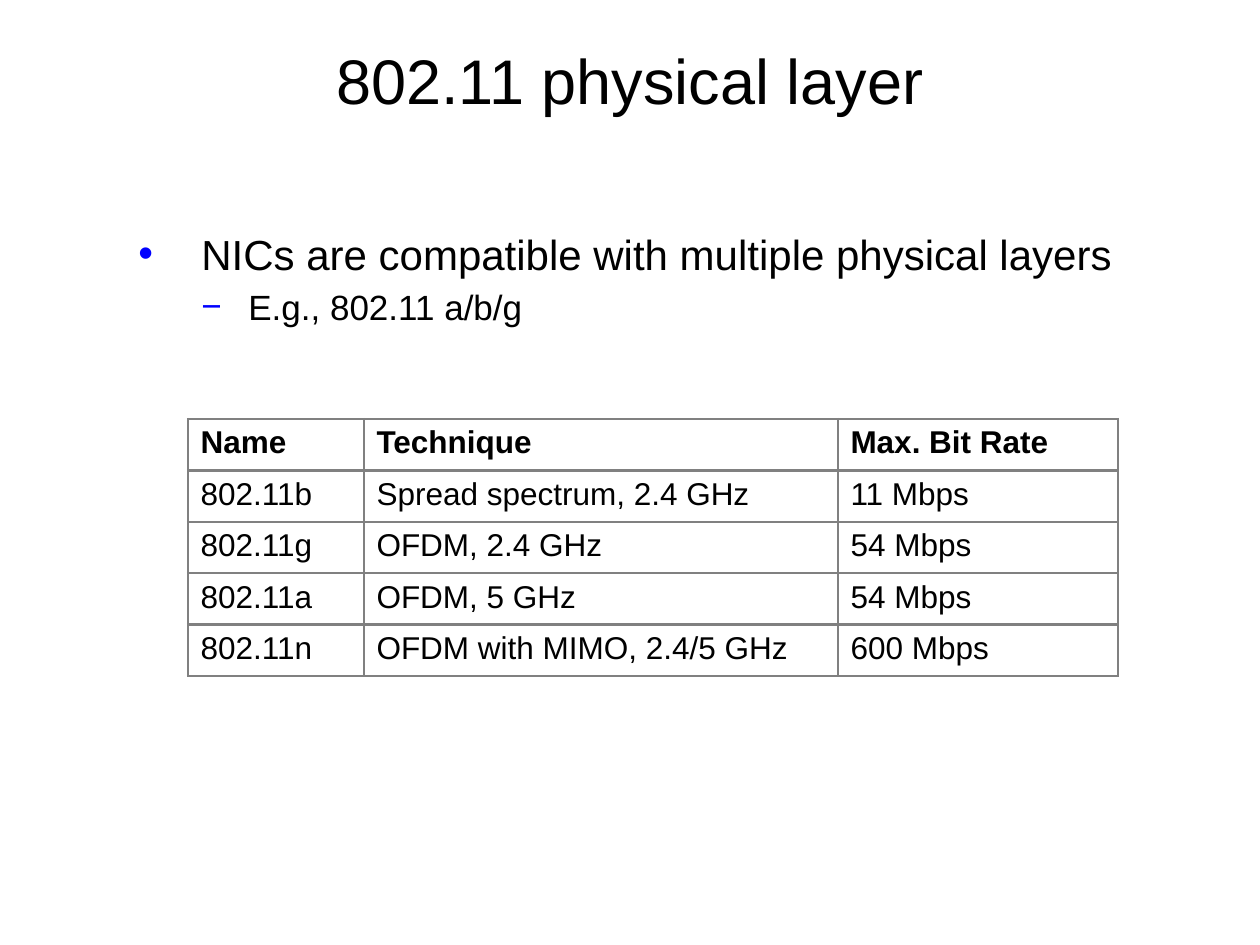
from lxml import etree
from pptx import Presentation, util as u
from pptx.dml.color import RGBColor
from pptx.enum import text
from pptx.oxml import ns

SCALE = 914400 / 126
COLORS = {"ink": "000000", "bullet": "0000FF", "grid": "808080", "paper": "FFFFFF"}
BULLETS = [
    {"words": "NICs are compatible with multiple physical layers", "size": 24,
     "char": "•", "left": 63, "hang": 63, "before": 6, "level": 0},
    {"words": "E.g., 802.11 a/b/g", "size": 20,
     "char": "−", "left": 110, "hang": 47, "before": 4, "level": 1},
]
ROWS = [
    ("Name", "Technique", "Max. Bit Rate"),
    ("802.11b", "Spread spectrum, 2.4 GHz", "11 Mbps"),
    ("802.11g", "OFDM, 2.4 GHz", "54 Mbps"),
    ("802.11a", "OFDM, 5 GHz", "54 Mbps"),
    ("802.11n", "OFDM with MIMO, 2.4/5 GHz", "600 Mbps"),
]


def px(length):
    return u.Emu(round(length * SCALE))


def add_node(parent, tag, **attributes):
    return etree.SubElement(parent, ns.qn(tag), attributes)


class SlideBuilder:
    """Holds the text style and the current slide, and adds elements to it."""

    def __init__(self, page, font="Arial"):
        self.page = page
        self.font = font

    def add_words(self, para, words, size, bold=False):
        span = para.add_run()
        span.text = words
        style = {"name": self.font, "size": u.Pt(size), "bold": bold}
        for key, value in style.items():
            setattr(span.font, key, value)
        span.font.color.rgb = RGBColor.from_string(COLORS["ink"])

    def frame(self, *place, anchor=text.MSO_ANCHOR.TOP):
        frame = self.page.shapes.add_textbox(*map(px, place)).text_frame
        for key, value in {"word_wrap": True, "vertical_anchor": anchor}.items():
            setattr(frame, key, value)
        return frame

    def title(self, words, *place):
        para = self.frame(*place, anchor=text.MSO_ANCHOR.MIDDLE).paragraphs[0]
        para.alignment = text.PP_ALIGN.CENTER
        self.add_words(para, words, 36)

    def bullets(self, items, *place):
        frame = self.frame(*place)
        for index, item in enumerate(items):
            para = frame.add_paragraph() if index else frame.paragraphs[0]
            for key, value in {"level": item["level"], "space_before": u.Pt(item["before"])}.items():
                setattr(para, key, value)
            props = para._p.get_or_add_pPr()
            props.set("marL", str(px(item["left"])))
            props.set("indent", str(-px(item["hang"])))
            add_node(add_node(props, "a:buClr"), "a:srgbClr", val=COLORS["bullet"])
            add_node(props, "a:buFont", typeface=self.font)
            add_node(props, "a:buChar", char=item["char"])
            self.add_words(para, item["words"], item["size"])

    def borders(self, cell, width=1.5):
        props = cell._tc.get_or_add_tcPr()
        for index, side in enumerate("LRTB"):
            line = etree.Element(ns.qn(f"a:ln{side}"), w=str(u.Pt(width)))
            add_node(add_node(line, "a:solidFill"), "a:srgbClr", val=COLORS["grid"])
            props.insert(index, line)

    def table(self, rows, left, top, widths, height):
        grid = self.page.shapes.add_table(
            len(rows), len(widths), px(left), px(top), px(sum(widths)), px(height)).table
        grid.horz_banding = False
        for column, width in zip(grid.columns, widths):
            column.width = px(width)
        for row_index, row in enumerate(rows):
            for column_index, words in enumerate(row):
                cell = grid.cell(row_index, column_index)
                cell.fill.solid()
                cell.fill.fore_color.rgb = RGBColor.from_string(COLORS["paper"])
                self.borders(cell)
                self.add_words(cell.text_frame.paragraphs[0], words, 18, bold=row_index == 0)


def main():
    deck = Presentation()
    deck.slide_width, deck.slide_height = px(1260), px(945)
    builder = SlideBuilder(deck.slides.add_slide(deck.slide_layouts[6]))
    builder.title("802.11 physical layer", 0, 0, 1260, 158)
    builder.bullets(BULLETS, 126, 222, 1074, 634)
    builder.table(ROWS, 188, 419, [176, 474, 280], 257)
    deck.save("out.pptx")


if __name__ == "__main__":
    main()
